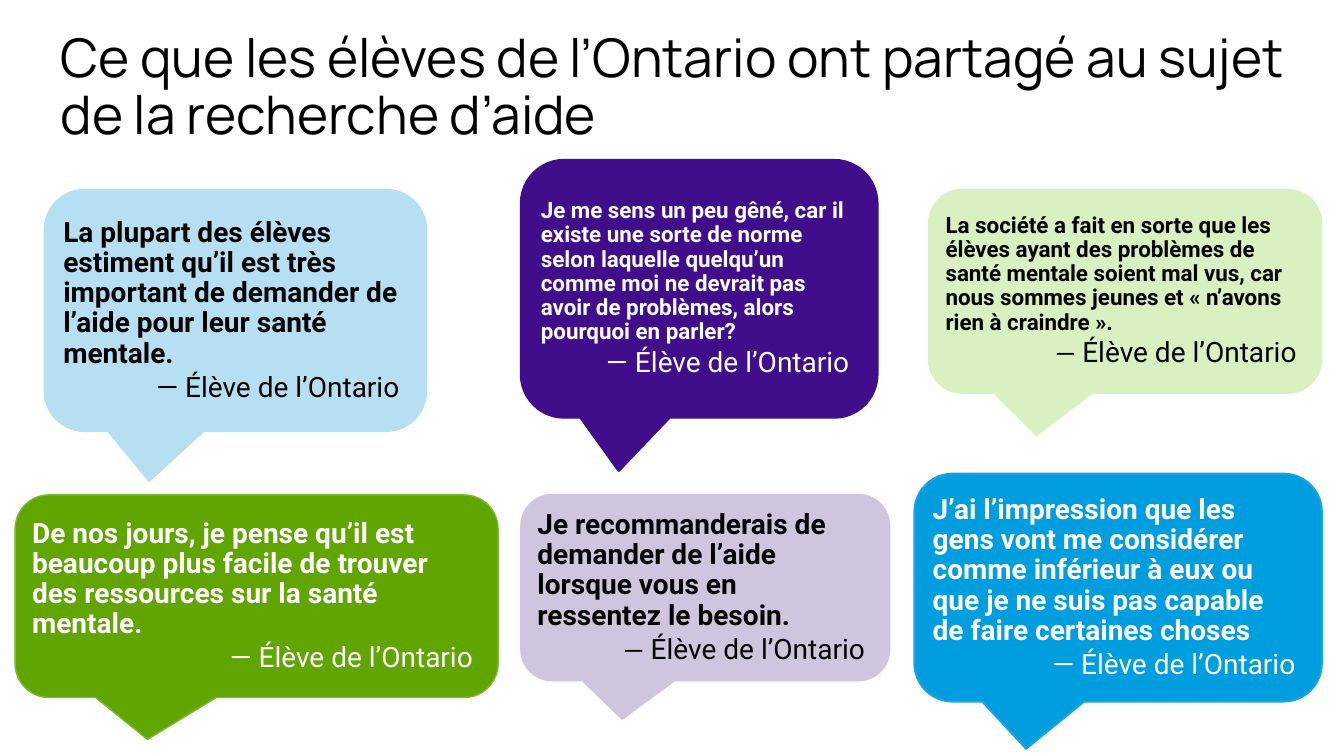
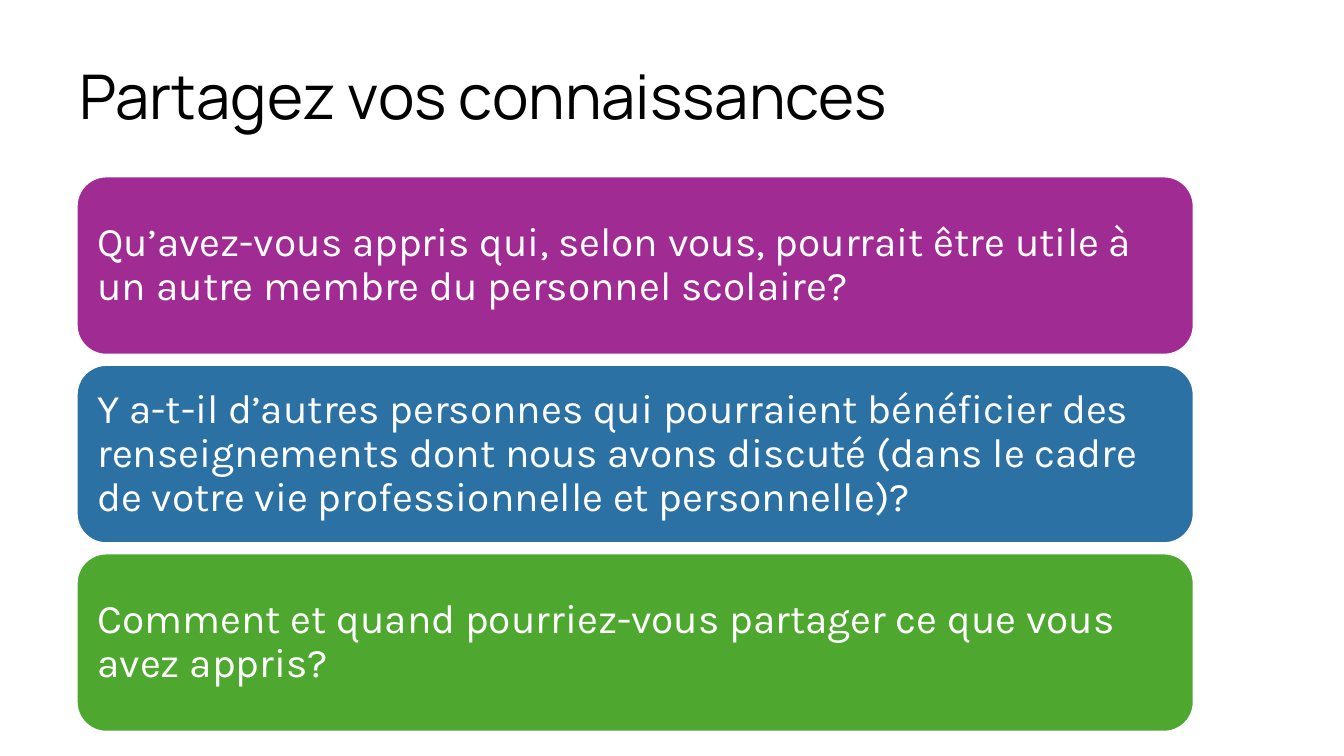
from dataclasses import dataclass

from pptx import Presentation
from pptx.dml.color import RGBColor
from pptx.enum import shapes, text
from pptx.util import Inches, Pt


@dataclass(frozen=True)
class Theme:
    title_font: str = "Manrope"
    quote_font: str = "Roboto"
    body_font: str = "Karla"
    black: str = "000000"
    white: str = "FFFFFF"
    sky: str = "B6DFF2"
    violet: str = "400E8A"
    mint: str = "D9F0C0"
    green: str = "60A500"
    green_edge: str = "7ABC30"
    lilac: str = "CFC5DE"
    blue: str = "009EDE"
    blue_edge: str = "1BA3DC"
    magenta: str = "A02B93"
    steel: str = "2C71A4"
    leaf: str = "4EA72E"
    long_title_size: int = 38
    title_size: int = 44
    quote_size: int = 20
    small_quote_size: int = 16
    question_size: int = 29
    line_spacing: float = 0.9


THEME = Theme()
DASH, SPEAKER = "— ", "Élève de l’Ontario"

# box, fill, edge, edge width, text colour, quote size, dash font, quote
QUOTES = [
    ((0.44, 1.88, 3.79, 2.4), THEME.sky, THEME.sky, 1, THEME.black,
     THEME.quote_size, THEME.quote_font,
     "La plupart des élèves estiment qu’il est très important de demander "
     "de l’aide pour leur santé mentale."),
    ((5.17, 1.59, 3.53, 2.55), THEME.violet, THEME.violet, 2, THEME.white,
     THEME.small_quote_size, THEME.quote_font,
     "Je me sens un peu gêné, car il existe une sorte de norme selon laquelle "
     "quelqu’un comme moi ne devrait pas avoir de problèmes, alors pourquoi "
     "en parler?"),
    ((9.21, 1.88, 3.9, 2.02), THEME.mint, THEME.mint, 1, THEME.black,
     THEME.small_quote_size, THEME.body_font,
     "La société a fait en sorte que les élèves ayant des problèmes de santé "
     "mentale soient mal vus, car nous sommes jeunes et « n’avons rien à "
     "craindre »."),
    ((0.15, 4.91, 4.79, 2.01), THEME.green, THEME.green_edge, 1, THEME.white,
     THEME.quote_size, THEME.quote_font,
     "De nos jours, je pense qu’il est beaucoup plus facile de trouver des "
     "ressources sur la santé mentale."),
    ((5.17, 4.91, 3.65, 1.84), THEME.lilac, THEME.lilac, 1.5, THEME.black,
     THEME.quote_size, THEME.body_font,
     "Je recommanderais de demander de l’aide lorsque vous en ressentez le "
     "besoin."),
    ((9.07, 4.7, 4.04, 2.26), THEME.blue, THEME.blue_edge, 1.5, THEME.white,
     THEME.quote_size, THEME.quote_font,
     "J’ai l’impression que les gens vont me considérer comme inférieur à eux "
     "ou que je ne suis pas capable de faire certaines choses"),
]

QUESTIONS = [
    (THEME.magenta, "Qu’avez-vous appris qui, selon vous, pourrait être utile à "
                    "un autre membre du personnel scolaire?"),
    (THEME.steel, "Y a-t-il d’autres personnes qui pourraient bénéficier des "
                  "renseignements dont nous avons discuté (dans le cadre de "
                  "votre vie professionnelle et personnelle)?"),
    (THEME.leaf, "Comment et quand pourriez-vous partager ce que vous avez "
                 "appris?"),
]


def style(paragraph, font_name, size, color, bold=False,
          align=text.PP_ALIGN.LEFT, spacing=THEME.line_spacing):
    paragraph.alignment = align
    paragraph.line_spacing = spacing
    font = paragraph.font
    font.name, font.size, font.bold = font_name, Pt(size), bold
    font.color.rgb = RGBColor.from_string(color)


def add_titled_slide(deck, title, box, size):
    slide = deck.slides.add_slide(deck.slide_layouts[5])
    heading = slide.shapes.title
    heading.left, heading.top, heading.width, heading.height = map(Inches, box)
    frame = heading.text_frame
    frame.text = title
    frame.auto_size = text.MSO_AUTO_SIZE.NONE
    frame.vertical_anchor = text.MSO_ANCHOR.MIDDLE
    style(frame.paragraphs[0], THEME.title_font, size, THEME.black)
    return slide


def add_panel(slide, preset, box, fill, edge, edge_width, insets):
    """Add a filled shape and return it; insets run left, top, right, bottom."""
    panel = slide.shapes.add_shape(preset, *map(Inches, box))
    panel.shadow.inherit = False
    panel.fill.solid()
    panel.fill.fore_color.rgb = RGBColor.from_string(fill)
    panel.line.color.rgb = RGBColor.from_string(edge)
    panel.line.width = Pt(edge_width)
    frame = panel.text_frame
    frame.word_wrap = True
    frame.vertical_anchor = text.MSO_ANCHOR.MIDDLE
    (frame.margin_left, frame.margin_top,
     frame.margin_right, frame.margin_bottom) = map(Inches, insets)
    return panel


def add_quote(slide, box, fill, edge, edge_width, color, size, dash_font, quote):
    bubble = add_panel(slide, shapes.MSO_SHAPE.ROUNDED_RECTANGULAR_CALLOUT, box,
                       fill, edge, edge_width, (0.07, 0.04, 0.15, 0.04))
    for index, value in enumerate((-0.226, 0.707, 0.167)):
        bubble.adjustments[index] = value
    frame = bubble.text_frame
    frame.text = quote
    style(frame.paragraphs[0], THEME.quote_font, size, color, bold=True)
    attribution = frame.add_paragraph()
    style(attribution, THEME.quote_font, THEME.quote_size, color,
          align=text.PP_ALIGN.RIGHT, spacing=1.0)
    for words, font_name in ((DASH, dash_font), (SPEAKER, THEME.quote_font)):
        run = attribution.add_run()
        run.text = words
        run.font.name = font_name


def add_questions(slide, left, top, width, height, gap):
    for row, (fill, question) in enumerate(QUESTIONS):
        box = (left, top + row * (height + gap), width, height)
        card = add_panel(slide, shapes.MSO_SHAPE.ROUNDED_RECTANGLE, box,
                         fill, THEME.white, 1.5, (0.12, 0.2, 0.12, 0.2))
        card.text_frame.text = question
        style(card.text_frame.paragraphs[0], THEME.body_font,
              THEME.question_size, THEME.white)


def build_quotes_slide(deck):
    slide = add_titled_slide(
        deck, "Ce que les élèves de l’Ontario ont partagé au sujet de la "
              "recherche d’aide",
        (0.5, 0.19, 12.83, 1.38), THEME.long_title_size)
    for quote in QUOTES:
        add_quote(slide, *quote)


def build_questions_slide(deck):
    slide = add_titled_slide(deck, "Partagez vos connaissances",
                             (0.69, 0.26, 11.5, 1.45), THEME.title_size)
    add_questions(slide, 0.76, 1.75, 11.08, 1.77, 0.1)


def main():
    deck = Presentation()
    deck.slide_width, deck.slide_height = Inches(13.33), Inches(7.5)
    build_quotes_slide(deck)
    build_questions_slide(deck)
    deck.save("out.pptx")


if __name__ == "__main__":
    main()
